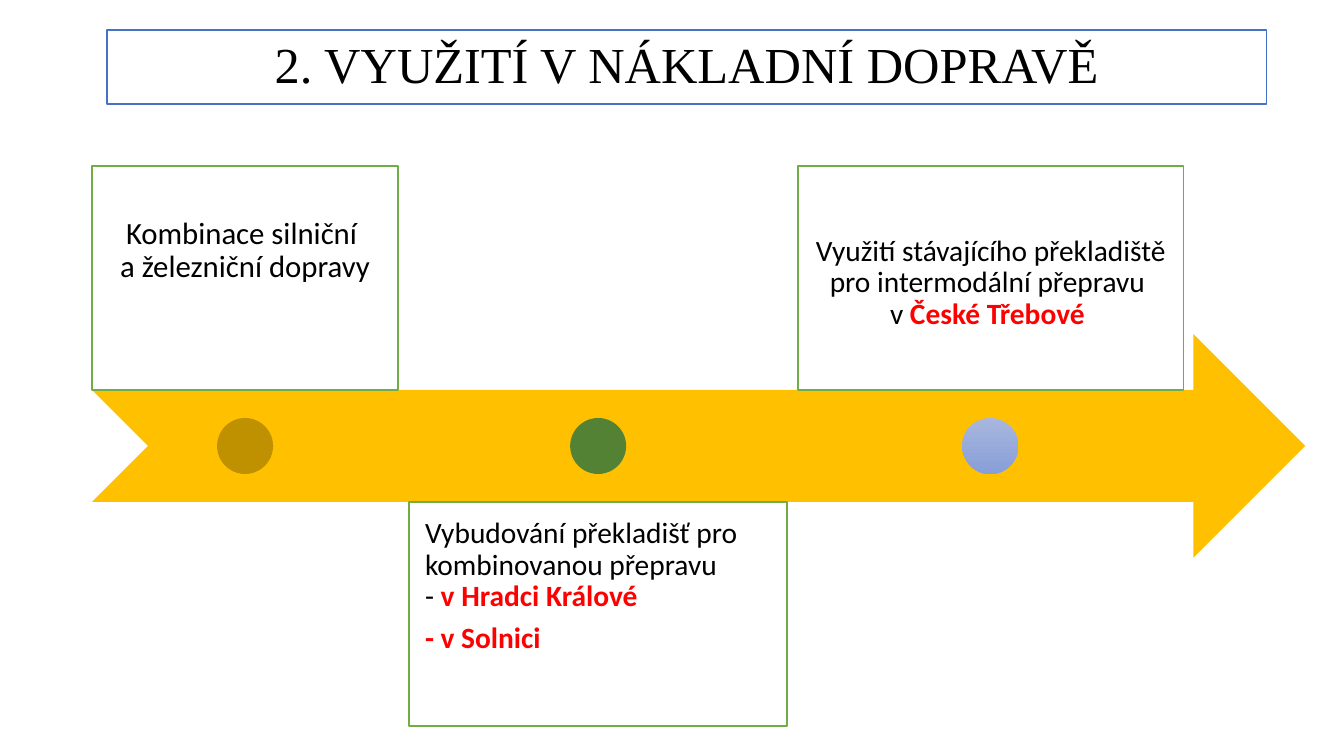
from dataclasses import dataclass

from pptx import Presentation
from pptx.dml.color import RGBColor
from pptx.enum.shapes import MSO_SHAPE
from pptx.enum.text import MSO_ANCHOR, PP_ALIGN
from pptx.shapes.autoshape import Shape
from pptx.slide import Slide
from pptx.util import Emu, Inches, Pt

RECTANGLE = MSO_SHAPE.RECTANGLE
ELLIPSE = MSO_SHAPE.OVAL
ARROW = MSO_SHAPE.NOTCHED_RIGHT_ARROW
TOP, MIDDLE, BOTTOM = MSO_ANCHOR.TOP, MSO_ANCHOR.MIDDLE, MSO_ANCHOR.BOTTOM
LEFT, CENTER = PP_ALIGN.LEFT, PP_ALIGN.CENTER

PX = 9071.43  # EMU in one px, at 100.8 px to the inch


@dataclass(frozen=True)
class Theme:
    title_font: str = "Times New Roman"
    body_font: str = "Calibri"
    title_size: int = 36
    large_size: int = 22
    body_size: int = 21
    text: str = "000000"
    accent: str = "FF0000"
    paper: str = "FFFFFF"
    title_line: str = "4472C4"
    card_line: str = "70AD47"
    arrow: str = "FFC000"
    gold: str = "BF9000"
    green: str = "548235"
    blue_top: str = "A8B7DF"
    blue_bottom: str = "889ED7"


THEME = Theme()


@dataclass(frozen=True)
class Span:
    text: str
    strong: bool = False


@dataclass(frozen=True)
class Milestone:
    width: int
    above: bool
    paragraphs: list[list[Span]]
    size: int
    align: PP_ALIGN
    anchor: MSO_ANCHOR
    inset: int
    bottom_inset: int
    dot: tuple[str, ...]  # one colour, or the two ends of a gradient


MILESTONES = [
    Milestone(306, True, [[Span("Kombinace silniční \na železniční dopravy")]],
              THEME.large_size, CENTER, BOTTOM, 17, 106, (THEME.gold,)),
    Milestone(378, False,
              [[Span("Vybudování překladišť pro kombinovanou přepravu \n- "),
                Span("v Hradci Králové", True)],
               [Span("- v Solnici", True)]],
              THEME.body_size, LEFT, TOP, 16, 16, (THEME.green,)),
    Milestone(385, True,
              [[Span("Využití stávajícího překladiště pro intermodální přepravu \nv "),
                Span("České Třebové ", True)]],
              THEME.body_size, CENTER, BOTTOM, 16, 59,
              (THEME.blue_top, THEME.blue_bottom)),
]

# Timeline geometry in px
TIMELINE_LEFT = 92
TIMELINE_WIDTH = 1213
BAND_TOP = 390
BAND_HEIGHT = 112
CARD_HEIGHT = 2 * BAND_HEIGHT
CARD_GAP = 11
DOT_SIZE = BAND_HEIGHT // 2


def px(length: int) -> Emu:
    return Emu(round(length * PX))


def color(value: str) -> RGBColor:
    return RGBColor.from_string(value)


def add_figure(page: Slide, kind: MSO_SHAPE, left: int, top: int, width: int,
               height: int, *, fill: tuple[str, ...], line: str = "") -> Shape:
    figure = page.shapes.add_shape(kind, px(left), px(top), px(width), px(height))
    figure.shadow.inherit = False
    if len(fill) == 1:
        figure.fill.solid()
        figure.fill.fore_color.rgb = color(fill[0])
    else:
        figure.fill.gradient()
        figure.fill.gradient_angle = 270
        for stop, value in zip(figure.fill.gradient_stops, fill):
            stop.color.rgb = color(value)
    if line:
        figure.line.color.rgb = color(line)
        figure.line.width = Pt(1)
    else:
        figure.line.fill.background()
    return figure


def write_text(box: Shape, paragraphs: list[list[Span]], *, font: str, size: int,
               align: PP_ALIGN, anchor: MSO_ANCHOR,
               insets: tuple[int, int, int, int]) -> None:
    frame = box.text_frame
    frame.word_wrap = True
    frame.vertical_anchor = anchor
    (frame.margin_left, frame.margin_top,
     frame.margin_right, frame.margin_bottom) = map(px, insets)
    for index, spans in enumerate(paragraphs):
        para = frame.add_paragraph() if index else frame.paragraphs[0]
        para.alignment = align
        para.line_spacing = 0.9
        if index < len(paragraphs) - 1:
            para.space_after = Pt(size * 0.35)
        for span in spans:
            for row, text in enumerate(span.text.split("\n")):
                if row:
                    para.add_line_break()
                run = para.add_run()
                run.text = text
                run.font.name = font
                run.font.size = Pt(size)
                run.font.bold = span.strong
                run.font.color.rgb = color(THEME.accent if span.strong else THEME.text)


def add_milestone(page: Slide, left: int, item: Milestone) -> None:
    top = BAND_TOP - CARD_HEIGHT if item.above else BAND_TOP + BAND_HEIGHT
    card = add_figure(page, RECTANGLE, left, top, item.width, CARD_HEIGHT,
                      fill=(THEME.paper,), line=THEME.card_line)
    write_text(card, item.paragraphs, font=THEME.body_font, size=item.size,
               align=item.align, anchor=item.anchor,
               insets=(item.inset, item.inset, item.inset, item.bottom_inset))
    add_figure(page, ELLIPSE, left + (item.width - DOT_SIZE) // 2,
               BAND_TOP + (BAND_HEIGHT - DOT_SIZE) // 2, DOT_SIZE, DOT_SIZE,
               fill=item.dot)


def main() -> None:
    deck = Presentation()
    deck.slide_width, deck.slide_height = Inches(13.33), Inches(7.5)
    page = deck.slides.add_slide(deck.slide_layouts[6])

    # Title
    title = add_figure(page, RECTANGLE, 107, 30, 1159, 74,
                       fill=(THEME.paper,), line=THEME.title_line)
    write_text(title, [[Span("2. VYUŽITÍ V NÁKLADNÍ DOPRAVĚ")]],
               font=THEME.title_font, size=THEME.title_size,
               align=CENTER, anchor=MIDDLE, insets=(10, 5, 10, 5))

    # Timeline arrow
    add_figure(page, ARROW, TIMELINE_LEFT, BAND_TOP - BAND_HEIGHT // 2,
               TIMELINE_WIDTH, 2 * BAND_HEIGHT, fill=(THEME.arrow,))

    # Milestones from left to right
    left = TIMELINE_LEFT
    for item in MILESTONES:
        add_milestone(page, left, item)
        left += item.width + CARD_GAP

    deck.save("out.pptx")


if __name__ == "__main__":
    main()
